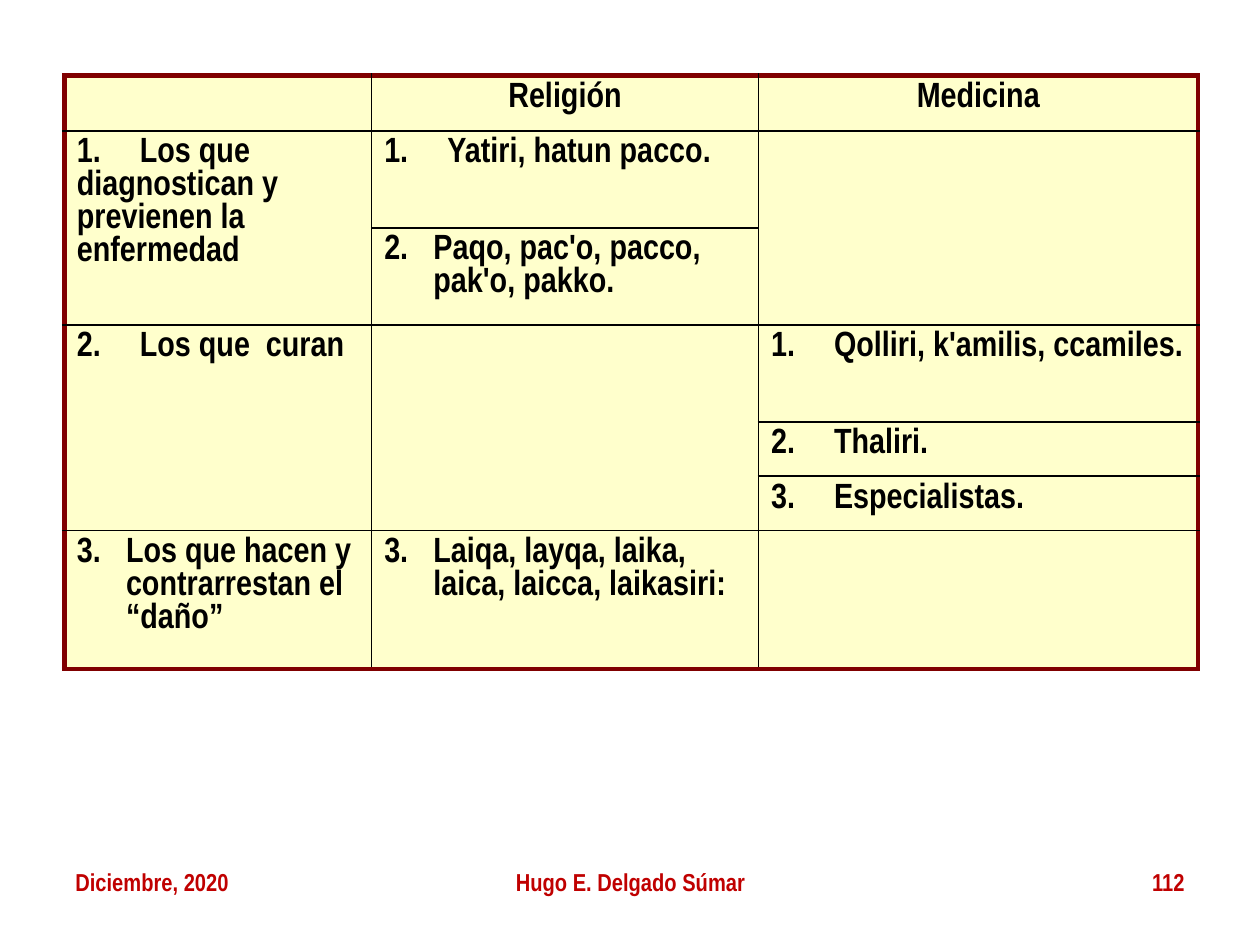
"""Build a slide with a table of Andean specialists in religion and medicine."""
from lxml import etree
from pptx import Presentation
from pptx import util as u
from pptx.dml.color import RGBColor
from pptx.enum import text
from pptx.oxml import ns

COLORS = {"ink": "000000", "frame": "800000", "cell": "FFFFCC", "footer": "C00000"}
AL = text.PP_ALIGN
WIDTHS = [2.44, 3.07, 3.49]
HEIGHTS = [0.44, 0.77, 0.77, 0.77, 0.43, 0.43, 1.1]
MERGES = [(1, 0, 2), (1, 2, 2), (3, 0, 3), (3, 1, 3)]
ENTRIES = {
    (0, 1): "Religión",
    (0, 2): "Medicina",
    (1, 0): "1. \tLos que \tdiagnostican y \tprevienen la \tenfermedad",
    (1, 1): "1. \tYatiri, hatun pacco.",
    (2, 1): "2. \tPaqo, pac'o, pacco, pak'o, pakko.",
    (3, 0): "2. \tLos que \tcuran",
    (3, 2): "1. \tQolliri, k'amilis, ccamiles.",
    (4, 2): "2. \tThaliri.",
    (5, 2): "3. \tEspecialistas.",
    (6, 0): "3. \tLos que hacen y contrarrestan el “daño”",
    (6, 1): "3. \tLaiqa, layqa, laika, \tlaica, laicca, laikasiri:",
}
HANGING = [(2, 1), (6, 0), (6, 1)]
FOOTERS = [
    (0.5, 2.33, "Diciembre, 2020", AL.LEFT),
    (3.42, 3.17, "Hugo E. Delgado Súmar", AL.CENTER),
    (7.17, 2.33, "112", AL.RIGHT),
]


def add_text(p, words, size, color):
    r = p.add_run()
    r.text = words
    r.font.name = "Arial Narrow"
    r.font.size = u.Pt(size)
    r.font.bold = True
    r.font.color.rgb = RGBColor.from_string(COLORS[color])


def add_border(cell, side, outer):
    width = u.Pt(3 if outer else 1)
    ln = etree.SubElement(cell._tc.get_or_add_tcPr(), ns.qn("a:ln" + side), w=str(width))
    fill = etree.SubElement(ln, ns.qn("a:solidFill"))
    etree.SubElement(fill, ns.qn("a:srgbClr"), val=COLORS["frame" if outer else "ink"])


prs = Presentation()
prs.slide_width, prs.slide_height = u.Inches(10), u.Inches(7.5)
s = prs.slides.add_slide(prs.slide_layouts[6])

rows, cols = len(HEIGHTS), len(WIDTHS)
table = s.shapes.add_table(
    rows, cols, u.Inches(0.51), u.Inches(0.6),
    u.Inches(sum(WIDTHS)), u.Inches(sum(HEIGHTS)),
).table
table.first_row = table.horz_banding = False
for column, width in zip(table.columns, WIDTHS):
    column.width = u.Inches(width)
for row, height in zip(table.rows, HEIGHTS):
    row.height = u.Inches(height)
for row, col, span in MERGES:
    table.cell(row, col).merge(table.cell(row + span - 1, col))

for row in range(rows):
    for col in range(cols):
        cell = table.cell(row, col)
        add_border(cell, "L", col == 0)
        add_border(cell, "R", col == cols - 1)
        if not cell.is_spanned:
            add_border(cell, "T", row == 0)
        if row == rows - 1 or not table.cell(row + 1, col).is_spanned:
            add_border(cell, "B", row == rows - 1)
        cell.fill.solid()
        cell.fill.fore_color.rgb = RGBColor.from_string(COLORS["cell"])
        if (row, col) in ENTRIES:
            p = cell.text_frame.paragraphs[0]
            p.alignment = AL.CENTER if row == 0 else AL.LEFT
            p.space_before = u.Pt(4)
            if (row, col) in HANGING:
                pPr = p._p.get_or_add_pPr()
                pPr.set("marL", str(u.Inches(0.39)))
                pPr.set("indent", str(u.Inches(-0.39)))
            add_text(p, ENTRIES[row, col], 20, "ink")

for left, width, words, align in FOOTERS:
    sp = s.shapes.add_textbox(u.Inches(left), u.Inches(6.83), u.Inches(width), u.Inches(0.52))
    tf = sp.text_frame
    tf.word_wrap = True
    p = tf.paragraphs[0]
    p.alignment = align
    add_text(p, words, 14, "footer")

prs.save("out.pptx")
